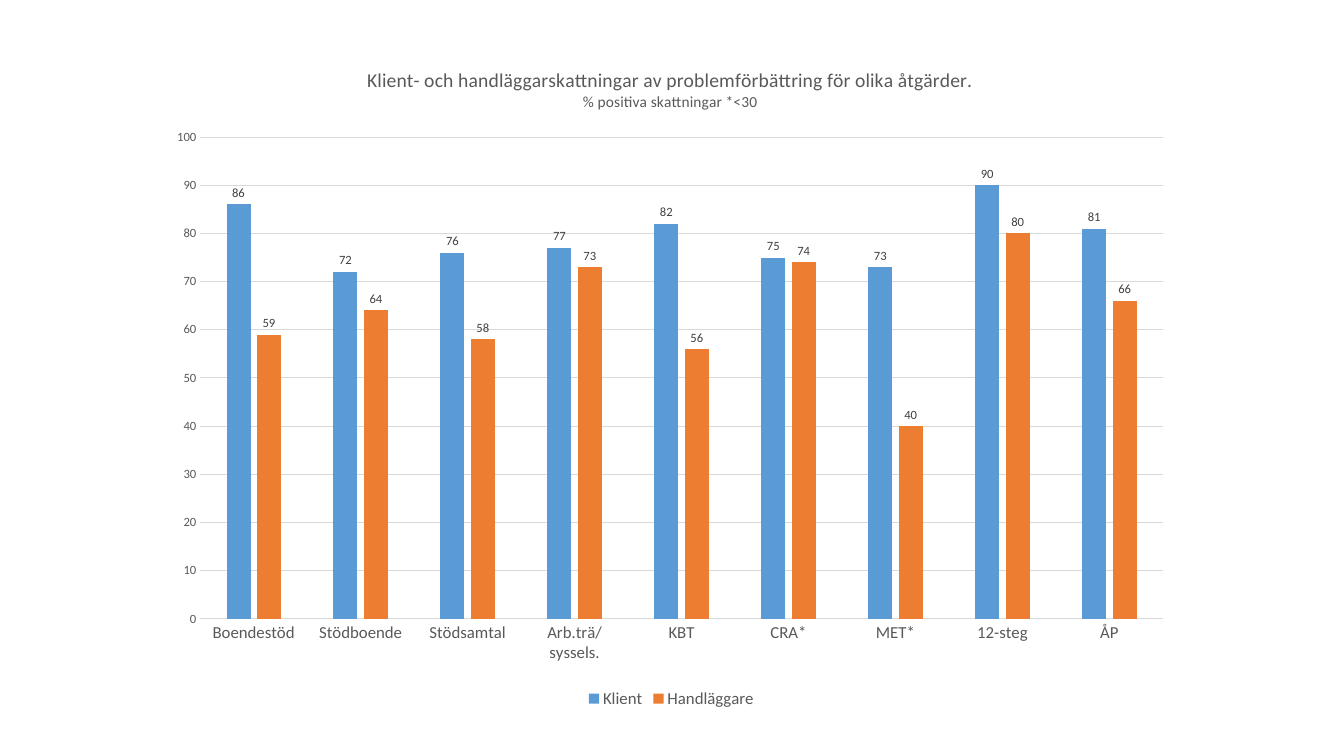
"""Build a slide with a column chart of client and case worker ratings."""
from dataclasses import dataclass

from lxml.etree import SubElement
from pptx import Presentation
from pptx.chart.data import CategoryChartData as Data
from pptx.dml.color import RGBColor
from pptx.enum.chart import XL_CHART_TYPE as Kind
from pptx.enum.chart import XL_LABEL_POSITION as Spot
from pptx.enum.chart import XL_LEGEND_POSITION as Side
from pptx.enum.chart import XL_TICK_MARK as Tick
from pptx.oxml.ns import qn
from pptx.util import Pt

FACE = "Calibri"
GREY = "595959"
RULE = "D9D9D9"


@dataclass
class Group:
    name: str
    color: str
    rates: tuple[int, ...]


@dataclass
class Line:
    text: str
    size: float


CARE = ("Boendestöd", "Stödboende", "Stödsamtal", "Arb.trä/syssels.", "KBT",
        "CRA*", "MET*", "12-steg", "ÅP")
GROUPS = (
    Group("Klient", "5B9BD5", (86, 72, 76, 77, 82, 75, 73, 90, 81)),
    Group("Handläggare", "ED7D31", (59, 64, 58, 73, 56, 74, 40, 80, 66)),
)
HEADS = (
    Line("Klient- och handläggarskattningar av problemförbättring "
         "för olika åtgärder.", 14),
    Line("% positiva skattningar *<30", 11),
)


def style(font, size: float, color: str = GREY) -> None:
    font.name = FACE
    font.size = Pt(size)
    font.bold = False
    font.color.rgb = RGBColor.from_string(color)


def rule(line) -> None:
    line.color.rgb = RGBColor.from_string(RULE)
    line.width = Pt(0.75)


def place(node, **spots: float) -> None:
    """Set a manual layout, in shares of the chart, on a title or plot."""
    lay = node.find(qn("c:layout"))
    if lay is None:
        lay = SubElement(node, qn("c:layout"))
        after = node.find(qn("c:tx"))
        if after is None:
            node.insert(0, lay)
        else:
            after.addnext(lay)
    man = SubElement(lay, qn("c:manualLayout"))
    if "w" in spots:
        SubElement(man, qn("c:layoutTarget")).set("val", "inner")
    for side in "xy":
        SubElement(man, qn(f"c:{side}Mode")).set("val", "edge")
    for key, share in spots.items():
        SubElement(man, qn(f"c:{key}")).set("val", str(share))


def add_head(chart) -> None:
    chart.has_title = True
    title = chart.chart_title
    title.include_in_layout = False
    frame = title.text_frame
    for i, head in enumerate(HEADS):
        para = frame.add_paragraph() if i else frame.paragraphs[0]
        run = para.add_run()
        run.text = head.text
        style(run.font, head.size)


def set_axes(chart) -> None:
    cat, val = chart.category_axis, chart.value_axis
    for axis, size in ((cat, 12), (val, 9)):
        axis.major_tick_mark = axis.minor_tick_mark = Tick.NONE
        style(axis.tick_labels.font, size)
    rule(cat.format.line)
    val.format.line.fill.background()
    val.minimum_scale, val.maximum_scale, val.major_unit = 0, 100, 10
    rule(val.major_gridlines.format.line)


def paint(bars, group: Group) -> None:
    bars.format.fill.solid()
    bars.format.fill.fore_color.rgb = RGBColor.from_string(group.color)
    tags = bars.data_labels
    tags.show_value = True
    tags.position = Spot.OUTSIDE_END
    style(tags.font, 9, "404040")


def add_chart(slide) -> None:
    data = Data()
    data.categories = CARE
    for group in GROUPS:
        data.add_series(group.name, group.rates)
    chart = slide.shapes.add_chart(
        Kind.COLUMN_CLUSTERED, Pt(113.8), Pt(31), Pt(731.5), Pt(478), data
    ).chart
    style(chart.font, 10, "000000")
    add_head(chart)
    set_axes(chart)
    plot = chart.plots[0]
    plot.gap_width, plot.overlap, plot.vary_by_categories = 219, -27, False
    for bars, group in zip(plot.series, GROUPS):
        paint(bars, group)
    chart.has_legend = True
    chart.legend.position = Side.BOTTOM
    chart.legend.include_in_layout = False
    style(chart.legend.font, 12)
    root = chart.element.chart
    place(root.find(qn("c:title")), x=0.2, y=0.03)
    place(root.plotArea, x=0.04, y=0.14, w=0.94, h=0.72)


def main() -> None:
    deck = Presentation()
    deck.slide_width, deck.slide_height = Pt(960), Pt(540)
    add_chart(deck.slides.add_slide(deck.slide_layouts[6]))
    deck.save("out.pptx")


if __name__ == "__main__":
    main()
